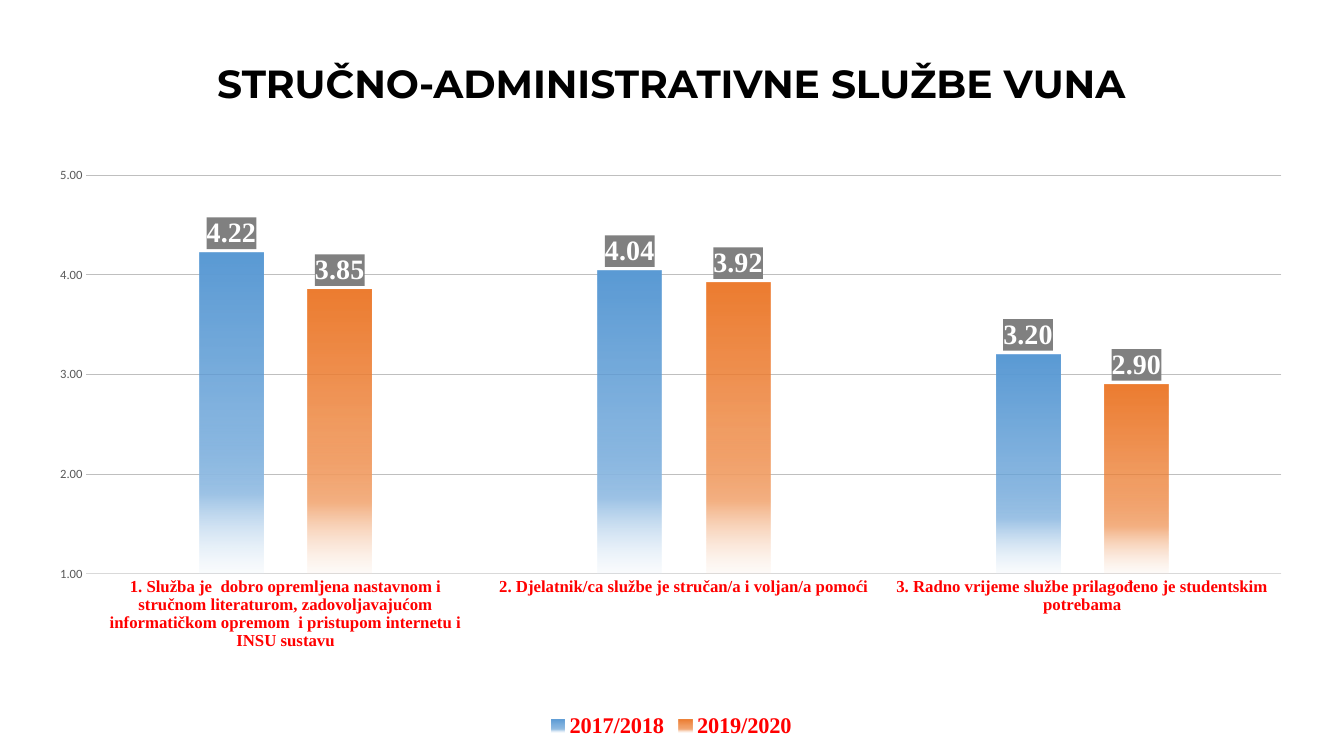
"""Build a slide comparing survey scores of administrative services in two years."""
import dataclasses

import lxml.etree
import pptx
import pptx.chart.data
import pptx.dml.color
import pptx.enum.chart
import pptx.enum.text
import pptx.oxml
import pptx.oxml.ns
import pptx.util

Cm = pptx.util.Cm
Pt = pptx.util.Pt


@dataclasses.dataclass(frozen=True)
class Theme:
    """Hold the colours, fonts and type sizes of the slide."""
    title: str = "000000"
    accent: str = "FF0000"
    scale: str = "595959"
    grid: str = "BFBFBF"
    baseline: str = "D9D9D9"
    label: str = "FFFFFF"
    label_back: str = "808080"
    blues: tuple = ("5B9BD5", "9DC3E6", "DEEBF7")
    oranges: tuple = ("ED7D31", "F4B183", "FBE5D6")
    title_font: str = "Montserrat"
    body_font: str = "Calibri"
    chart_font: str = "Times New Roman"
    title_size: int = 28
    label_size: int = 20
    legend_size: int = 16
    category_size: int = 12
    base_size: int = 10
    scale_size: int = 9


THEME = Theme()
TITLE = "STRUČNO-ADMINISTRATIVNE SLUŽBE VUNA"
CATEGORIES = (
    "1. Služba je  dobro opremljena nastavnom i stručnom literaturom, "
    "zadovoljavajućom informatičkom opremom  i pristupom internetu i INSU sustavu",
    "2. Djelatnik/ca službe je stručan/a i voljan/a pomoći",
    "3. Radno vrijeme službe prilagođeno je studentskim potrebama",
)
SCORES = (
    ("2017/2018", (4.22, 4.04, 3.20), THEME.blues),
    ("2019/2020", (3.85, 3.92, 2.90), THEME.oranges),
)


def set_attributes(target, values):
    """Set every attribute named in a dict of format values."""
    for name, value in values.items():
        setattr(target, name, value)


def format_font(font, name, size, color, bold=False):
    """Give a font its face, size, weight and colour."""
    set_attributes(font, {"name": name, "size": Pt(size), "bold": bold})
    font.color.rgb = pptx.dml.color.RGBColor.from_string(color)


def format_line(line, color):
    """Draw a line thinly in one colour."""
    line.width = Pt(0.75)
    line.color.rgb = pptx.dml.color.RGBColor.from_string(color)


def add_title(slide, text):
    """Add the centred slide title."""
    shape = slide.shapes.add_textbox(Cm(2.31), Cm(0.33), Cm(29.21), Cm(3.68))
    set_attributes(shape.text_frame, {
        "word_wrap": True,
        "vertical_anchor": pptx.enum.text.MSO_ANCHOR.MIDDLE,
    })
    paragraph = shape.text_frame.paragraphs[0]
    set_attributes(paragraph, {
        "text": text,
        "alignment": pptx.enum.text.PP_ALIGN.CENTER,
        "line_spacing": 0.9,
    })
    format_font(paragraph.runs[0].font, THEME.title_font, THEME.title_size, THEME.title, True)


def fill_fading(series, colors):
    """Fill bars with a vertical gradient that fades out at the bottom."""
    strong, soft, pale = colors
    stops = ((0, strong, 100), (51, strong, 75), (75, soft, 100), (100, pale, 15))
    stop_xml = "".join(
        f'<a:gs pos="{position * 1000}"><a:srgbClr val="{color}">'
        f'<a:alpha val="{alpha * 1000}"/></a:srgbClr></a:gs>'
        for position, color, alpha in stops
    )
    properties = series._element.get_or_add_spPr()
    properties.append(pptx.oxml.parse_xml(
        f'<a:gradFill {pptx.oxml.ns.nsdecls("a")} rotWithShape="1"><a:gsLst>{stop_xml}</a:gsLst>'
        '<a:lin ang="5400000" scaled="0"/></a:gradFill>'
    ))


def add_labels(series):
    """Show values above the bars on a grey ground."""
    labels = series.data_labels
    set_attributes(labels, {
        "show_value": True,
        "number_format": "0.00",
        "number_format_is_linked": False,
        "position": pptx.enum.chart.XL_LABEL_POSITION.OUTSIDE_END,
    })
    format_font(labels.font, THEME.chart_font, THEME.label_size, THEME.label, True)
    ground = pptx.oxml.parse_xml(
        f'<c:spPr {pptx.oxml.ns.nsdecls("c", "a")}><a:solidFill>'
        f'<a:srgbClr val="{THEME.label_back}"/></a:solidFill></c:spPr>'
    )
    labels._element.find(pptx.oxml.ns.qn("c:txPr")).addprevious(ground)


def place_plot(chart, **fractions):
    """Fix the inner plot area by fractions of the chart."""
    plot_area = chart._chartSpace.chart.plotArea
    for layout in plot_area.findall(pptx.oxml.ns.qn("c:layout")):
        plot_area.remove(layout)
    settings = {"layoutTarget": "inner", "xMode": "edge", "yMode": "edge", **fractions}
    layout = lxml.etree.Element(pptx.oxml.ns.qn("c:layout"))
    manual = lxml.etree.SubElement(layout, pptx.oxml.ns.qn("c:manualLayout"))
    for name, value in settings.items():
        lxml.etree.SubElement(manual, pptx.oxml.ns.qn(f"c:{name}"), val=str(value))
    plot_area.insert(0, layout)


def format_axes(chart):
    """Style the category axis, the value axis and the gridlines."""
    no_tick = pptx.enum.chart.XL_TICK_MARK.NONE
    for axis in (chart.category_axis, chart.value_axis):
        set_attributes(axis, {"major_tick_mark": no_tick, "minor_tick_mark": no_tick})
    categories, values = chart.category_axis, chart.value_axis
    format_font(categories.tick_labels.font, THEME.chart_font, THEME.category_size,
                THEME.accent, True)
    format_line(categories.format.line, THEME.baseline)
    set_attributes(values, {
        "minimum_scale": 1, "maximum_scale": 5, "major_unit": 1, "has_major_gridlines": True,
    })
    set_attributes(values.tick_labels, {
        "number_format": "0.00", "number_format_is_linked": False,
    })
    format_font(values.tick_labels.font, THEME.body_font, THEME.scale_size, THEME.scale)
    values.format.line.fill.background()
    format_line(values.major_gridlines.format.line, THEME.grid)


def add_score_chart(slide):
    """Add the clustered columns with their legend."""
    data = pptx.chart.data.CategoryChartData(number_format="0.00")
    data.categories = CATEGORIES
    for name, values, _ in SCORES:
        data.add_series(name, values)
    chart = slide.shapes.add_chart(
        pptx.enum.chart.XL_CHART_TYPE.COLUMN_CLUSTERED,
        Cm(1.07), Cm(3.99), Cm(31.7), Cm(14.73), data,
    ).chart
    set_attributes(chart, {"has_title": False, "has_legend": True})
    format_font(chart.font, THEME.body_font, THEME.base_size, THEME.title)
    set_attributes(chart.legend, {
        "position": pptx.enum.chart.XL_LEGEND_POSITION.BOTTOM, "include_in_layout": False,
    })
    format_font(chart.legend.font, THEME.chart_font, THEME.legend_size, THEME.accent, True)
    plot = chart.plots[0]
    set_attributes(plot, {"gap_width": 355, "overlap": -70, "vary_by_categories": False})
    for series, (_, _, colors) in zip(plot.series, SCORES):
        fill_fading(series, colors)
        add_labels(series)
    format_axes(chart)
    place_plot(chart, x=0.035, y=0.029, w=0.95, h=0.682)


def main():
    """Build and save the presentation."""
    presentation = pptx.Presentation()
    set_attributes(presentation, {"slide_width": Cm(33.87), "slide_height": Cm(19.05)})
    slide = presentation.slides.add_slide(presentation.slide_layouts[6])
    add_title(slide, TITLE)
    add_score_chart(slide)
    presentation.save("out.pptx")


if __name__ == "__main__":
    main()
